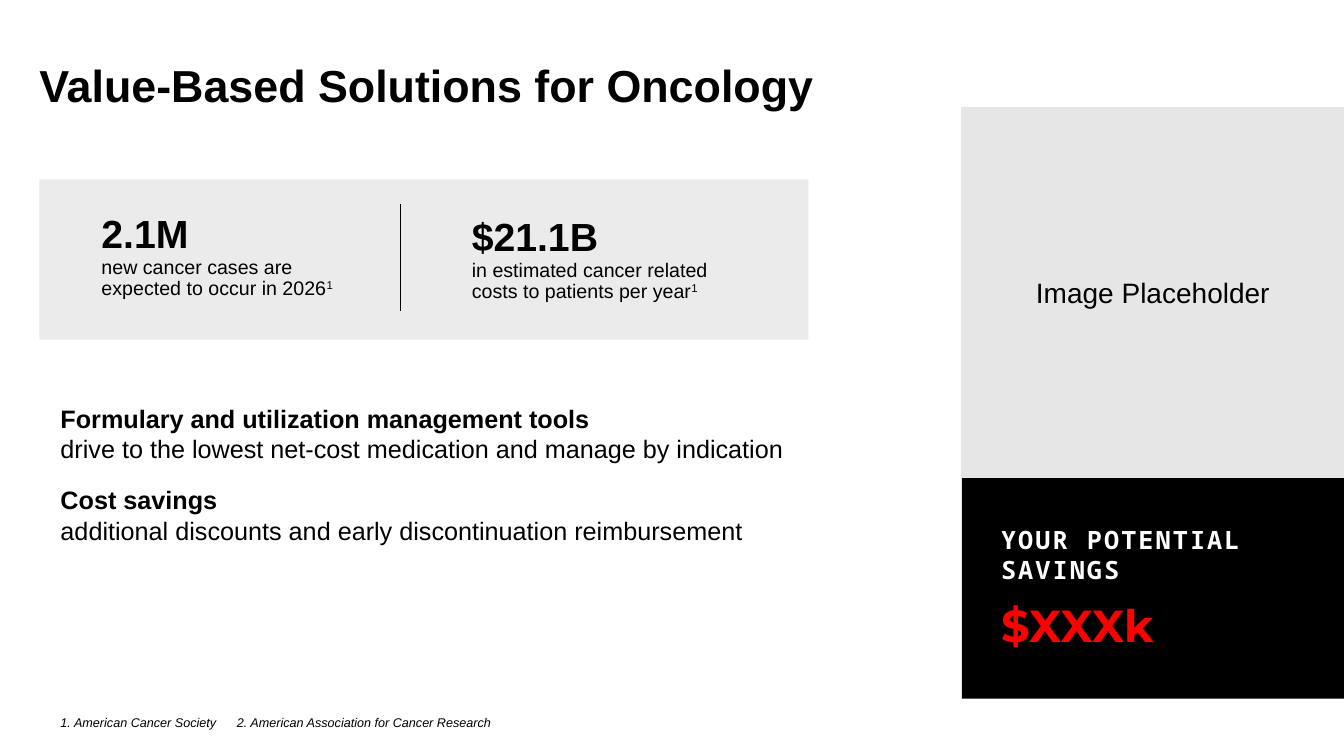
from lxml.etree import SubElement
from pptx import Presentation
from pptx.dml.color import RGBColor
from pptx.enum.shapes import MSO_CONNECTOR, MSO_SHAPE
from pptx.enum.text import MSO_ANCHOR, PP_ALIGN
from pptx.oxml.ns import qn
from pptx.util import Pt

BLACK = RGBColor(0, 0, 0)
WHITE = RGBColor(255, 255, 255)
RED = RGBColor(255, 0, 0)
GRAY = RGBColor(0xE7, 0xE6, 0xE6)

TITLE = "Value-Based Solutions for Oncology"
# left, top, width, figure, label, note mark
STATS = [
    (72.5, 153.4, 170.6, "2.1M", "new cancer cases are expected to occur in 2026", "1"),
    (337, 155.5, 200.2, "$21.1B",
     "in estimated cancer related costs to patients per year", "1"),
]
TOOLS = [
    ("Formulary and utilization management tools",
     "drive to the lowest net-cost medication and manage by indication"),
    ("Cost savings",
     "additional discounts and early discontinuation reimbursement"),
]
NOTES = ["1. American Cancer Society", "2. American Association for Cancer Research"]
SAVE_HEAD, SAVE_SUM = "YOUR POTENTIAL SAVINGS", "$XXXk"
HOLDER = "Image Placeholder"

SIDE, SIDE_W, SPLIT = 687, 273, 341.3
TEXT_X = 43.2
TOOL_Y, TOOL_STEP = 284.4, 58.3


def add_rect(box, fill):
    shape = slide.shapes.add_shape(MSO_SHAPE.RECTANGLE, *map(Pt, box))
    shape.shadow.inherit = False
    shape.fill.solid()
    shape.fill.fore_color.rgb = fill
    shape.line.fill.background()
    return shape


def add_box(*box, pad=0, right=0):
    frame = slide.shapes.add_textbox(*map(Pt, box)).text_frame
    frame.word_wrap = True
    frame.margin_left = 0
    frame.margin_right = Pt(right)
    frame.margin_top = frame.margin_bottom = Pt(pad)
    return frame


def style(para, size, bold=False, color=BLACK, name="Arial"):
    font = para.font
    font.name, font.size, font.bold = name, Pt(size), bold
    font.color.rgb = color


def add_run(para, text, **attrs):
    """Add a run, with raw run attributes such as baseline or spc."""
    run = para.add_run()
    run.text = text
    for key, value in attrs.items():
        run._r.get_or_add_rPr().set(key, value)
    return run


deck = Presentation()
deck.slide_width, deck.slide_height = Pt(960), Pt(540)
slide = deck.slides.add_slide(deck.slide_layouts[6])

band = add_rect((28.1, 128.2, 549.4, 114.5), GRAY)
tint = band.fill._xPr.find(qn("a:solidFill"))[0]
SubElement(tint, qn("a:alpha")).set("val", "80000")

para = add_box(28.1, 41, 558.7, 79.2).paragraphs[0]
add_run(para, TITLE)
style(para, 32, True)

for i, (head, text) in enumerate(TOOLS):
    para = add_box(TEXT_X, TOOL_Y + i * TOOL_STEP, 566, 51.1,
                   pad=3.6, right=7.2).paragraphs[0]
    add_run(para, head).font.bold = True
    para.add_line_break()
    add_run(para, text)
    style(para, 18)

for left, top, width, figure, label, mark in STATS:
    frame = add_box(left, top, width, 61.2)
    first, second = frame.paragraphs[0], frame.add_paragraph()
    first.line_spacing = second.line_spacing = 0.9
    add_run(first, figure)
    style(first, 28, True)
    add_run(second, label)
    add_run(second, mark, baseline="30000")
    style(second, 14)

rule = slide.shapes.add_connector(
    MSO_CONNECTOR.STRAIGHT, Pt(286), Pt(222), Pt(286), Pt(146))
rule.line.color.rgb = BLACK
rule.line.width = Pt(0.5)
SubElement(rule._element.spPr, qn("a:effectLst"))

frame = add_box(TEXT_X, 491.8, 334.8, 29.5)
frame.vertical_anchor = MSO_ANCHOR.BOTTOM
para = frame.paragraphs[0]
add_run(para, "\t".join(NOTES))
para.line_spacing = 1.2
para.space_after = Pt(3)
tabs = SubElement(para._p.get_or_add_pPr(), qn("a:tabLst"))
stop = SubElement(tabs, qn("a:tab"))
stop.set("pos", str(Pt(126)))
stop.set("algn", "l")
style(para, 9)
para.font.italic = True

add_rect((SIDE, SPLIT, SIDE_W, 157.7), BLACK)
frame = add_box(715, 374.4, 217.4, 91.4)
head, total = frame.paragraphs[0], frame.add_paragraph()
add_run(head, SAVE_HEAD, spc="150")
style(head, 18, True, WHITE, "Noto Sans Mono")
add_run(total, SAVE_SUM)
style(total, 32, True, RED, "Montserrat")
total.space_before = Pt(3)
head.space_after = total.space_after = Pt(6)

photo = add_rect((SIDE, 77, SIDE_W, SPLIT - 77), GRAY)
photo.line.color.rgb = GRAY
photo.line.width = Pt(1)
frame = photo.text_frame
frame.vertical_anchor = MSO_ANCHOR.MIDDLE
para = frame.paragraphs[0]
para.alignment = PP_ALIGN.CENTER
add_run(para, HOLDER)
style(para, 20)

deck.save("out.pptx")
